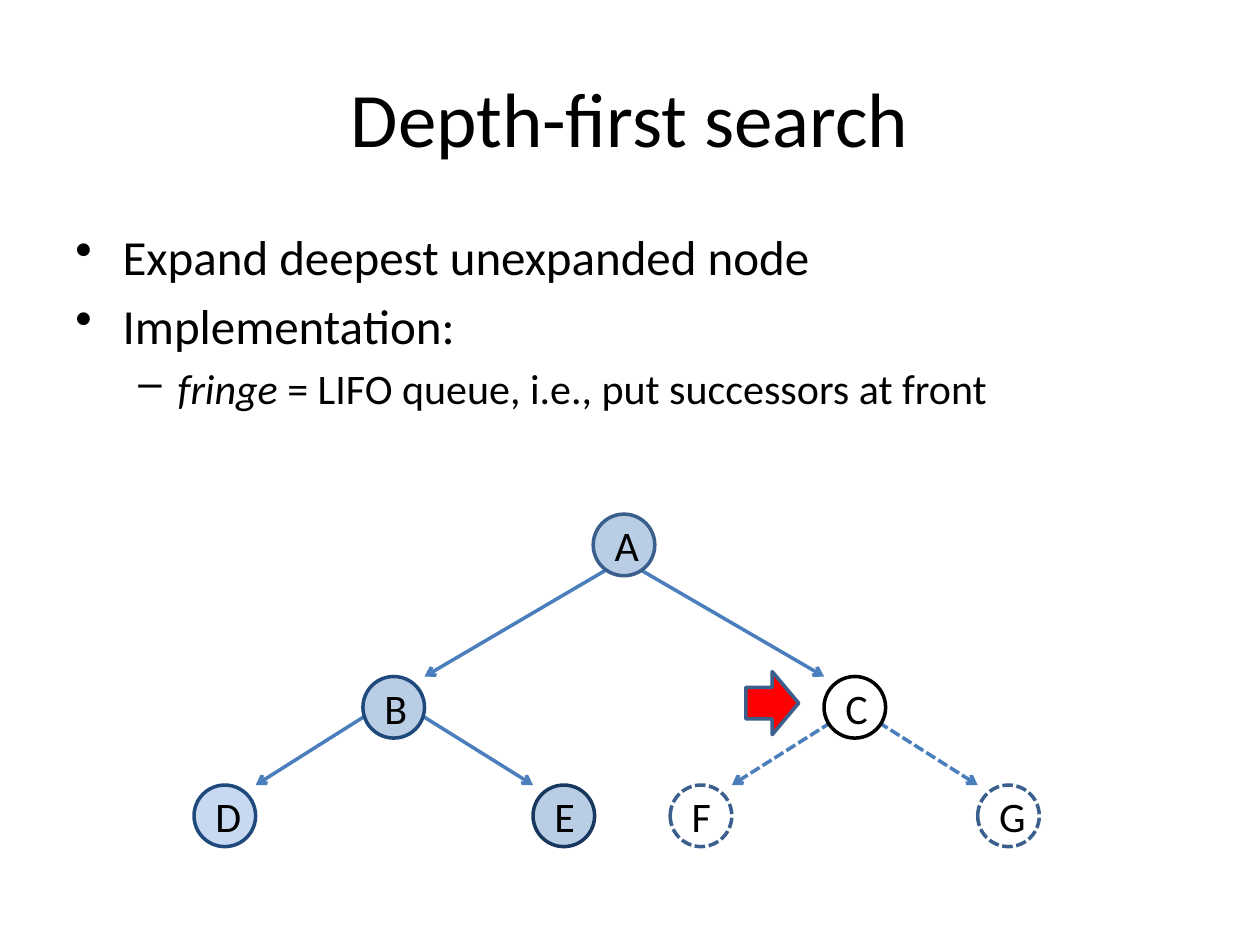
from lxml import etree
from pptx import Presentation
from pptx.dml.color import RGBColor
from pptx.enum.dml import MSO_LINE as Dash
from pptx.enum.shapes import MSO_CONNECTOR as Link, MSO_SHAPE as Kind
from pptx.enum.text import MSO_ANCHOR as Anchor, PP_ALIGN as Align
from pptx.oxml.ns import qn
from pptx.util import Pt

BLACK = RGBColor(0x00, 0x00, 0x00)
WHITE = RGBColor(0xFF, 0xFF, 0xFF)
RED = RGBColor(0xFF, 0x00, 0x00)
EDGE = RGBColor(0x4B, 0x7E, 0xBC)
STEEL = RGBColor(0x3A, 0x5F, 0x8C)
NAVY = RGBColor(0x1F, 0x49, 0x7D)
DEEP = RGBColor(0x17, 0x37, 0x5E)
BLUE = RGBColor(0xB9, 0xCD, 0xE5)
PALE = RGBColor(0xC6, 0xD9, 0xF1)


def style(par, size):
    par.font.name = "Calibri"
    par.font.size = Pt(size)
    par.font.color.rgb = BLACK


def paint(shape, fill, line):
    shape.shadow.inherit = False
    shape.fill.solid()
    shape.fill.fore_color.rgb = fill
    shape.line.color.rgb = line
    shape.line.width = Pt(2)


deck = Presentation()
deck.slide_width, deck.slide_height = Pt(720), Pt(540)
slide = deck.slides.add_slide(deck.slide_layouts[6])

# Title
frame = slide.shapes.add_textbox(Pt(36), Pt(21.6), Pt(648), Pt(90)).text_frame
frame.word_wrap = True
frame.vertical_anchor = Anchor.MIDDLE
par = frame.paragraphs[0]
par.text = "Depth-first search"
par.alignment = Align.CENTER
style(par, 44)

# Bullets: level, size, left margin, hanging indent, mark, (text, italic) runs
items = [
    (0, 28, 27, 27, "•", [("Expand deepest unexpanded node", False)]),
    (0, 28, 27, 27, "•", [("Implementation:", False)]),
    (1, 24, 58.5, 22.5, "–", [("fringe ", True),
     ("= LIFO queue, i.e., put successors at front", False)]),
]
frame = slide.shapes.add_textbox(Pt(36), Pt(126), Pt(648), Pt(356.4)).text_frame
frame.word_wrap = True
for i, (level, size, left, hang, mark, runs) in enumerate(items):
    par = frame.add_paragraph() if i else frame.paragraphs[0]
    par.level = level
    par.space_before = Pt(size * 0.2)
    style(par, size)
    for text, slant in runs:
        run = par.add_run()
        run.text = text
        run.font.italic = slant
    props = par._p.get_or_add_pPr()
    props.set("marL", str(Pt(left)))
    props.set("indent", str(-Pt(hang)))
    bullet = etree.Element(qn("a:buChar"), char=mark)
    props.find(qn("a:defRPr")).addprevious(bullet)

# Tree: name -> left, top, fill, outline, dashed
SIZE = 35.2
nodes = {
    "A": (339, 293.8, BLUE, STEEL, False),
    "B": (207.4, 386.6, BLUE, NAVY, False),
    "C": (470.9, 386.6, WHITE, BLACK, False),
    "D": (110.9, 448.6, PALE, NAVY, False),
    "E": (304.6, 448.6, BLUE, DEEP, False),
    "F": (383, 448.6, WHITE, STEEL, True),
    "G": (558.7, 448.6, WHITE, STEEL, True),
}
# Parent, child, and where the edge starts from the parent's centre
edges = [
    ("A", "B", -8, 13), ("A", "C", 9, 14),
    ("B", "D", -8.5, 0), ("B", "E", 8.5, 0),
    ("C", "F", 0, 0), ("C", "G", 0, 0),
]
tree = slide.shapes.add_group_shape().shapes

for parent, child, dx, dy in edges:
    left, top = nodes[parent][:2]
    end, low, _, _, dashed = nodes[child]
    if end < left:
        end += SIZE
    edge = tree.add_connector(
        Link.STRAIGHT, Pt(left + SIZE / 2 + dx), Pt(top + SIZE / 2 + dy),
        Pt(end), Pt(low))
    edge.line.color.rgb = EDGE
    edge.line.width = Pt(2)
    if dashed:
        edge.line.dash_style = Dash.SQUARE_DOT
    props = edge._element.spPr
    etree.SubElement(props.find(qn("a:ln")), qn("a:tailEnd"), type="arrow")
    etree.SubElement(props, qn("a:effectLst"))

for name, (left, top, fill, line, dashed) in nodes.items():
    node = tree.add_shape(Kind.OVAL, Pt(left), Pt(top), Pt(SIZE), Pt(SIZE))
    paint(node, fill, line)
    if dashed:
        node.line.dash_style = Dash.SQUARE_DOT
    node.text_frame.vertical_anchor = Anchor.MIDDLE
    par = node.text_frame.paragraphs[0]
    par.text = name
    par.alignment = Align.CENTER
    style(par, 24)

# Arrow at the next node to expand
arrow = slide.shapes.add_shape(
    Kind.RIGHT_ARROW, Pt(426.2), Pt(383.8), Pt(30.2), Pt(36))
paint(arrow, RED, STEEL)

deck.save("out.pptx")
